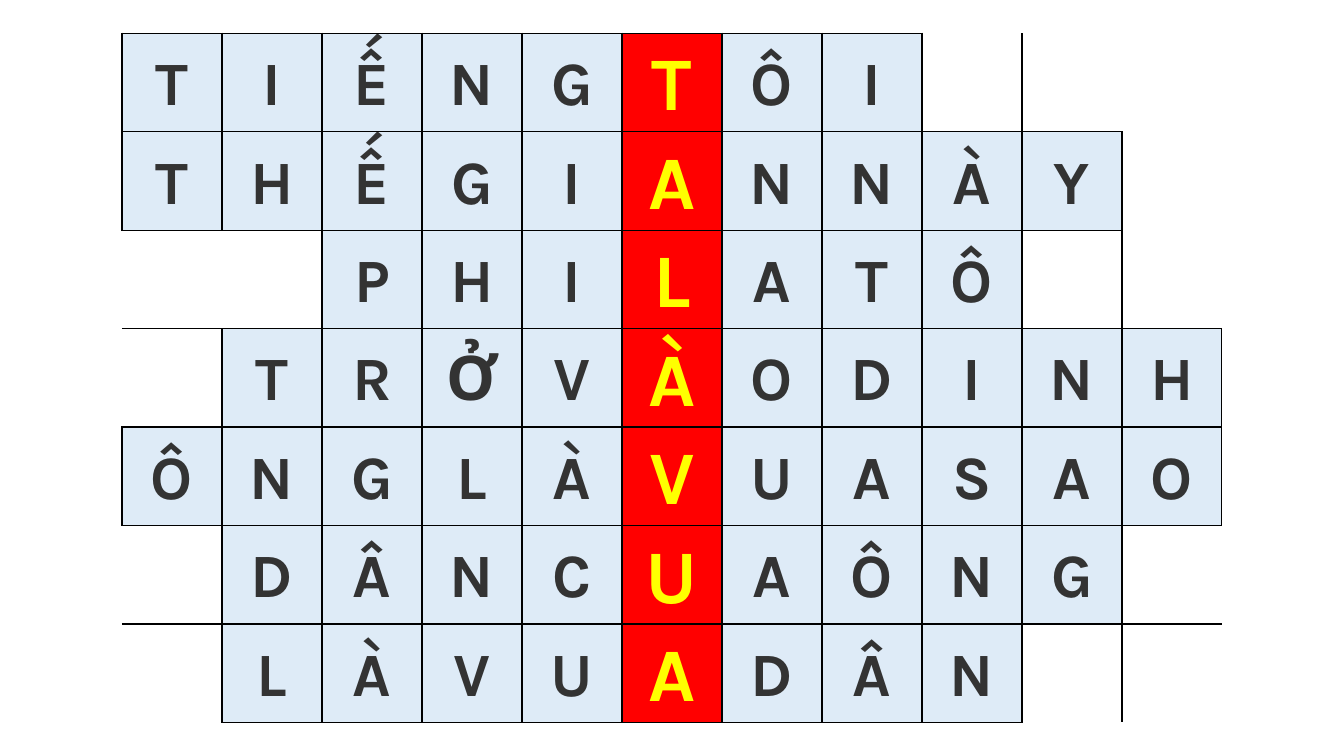
import pptx
import pptx.util
import pptx.dml.color
import pptx.enum.text
import pptx.oxml.ns
import lxml.etree
from pptx.util import Inches

PALE_BLUE = pptx.dml.color.RGBColor(0xDE, 0xEB, 0xF7)
RED = pptx.dml.color.RGBColor(0xFF, 0x00, 0x00)
YELLOW = pptx.dml.color.RGBColor(0xFF, 0xFF, 0x00)
DARK_GREY = pptx.dml.color.RGBColor(0x33, 0x33, 0x33)
BLACK = pptx.dml.color.RGBColor(0x00, 0x00, 0x00)

COLUMN_COUNT = 11
KEY_COLUMN = 5
NO_GRID_STYLE = "{2D5ABB26-0587-4C30-8999-92F81FD0307C}"
ANSWERS = [
    (0, "TIẾNGTÔI"),
    (0, "THẾGIANNÀY"),
    (2, "PHILATÔ"),
    (1, "TRỞVÀODINH"),
    (0, "ÔNGLÀVUASAO"),
    (1, "DÂNCUAÔNG"),
    (1, "LÀVUADÂN"),
]
EDGES = {"lnL": (0, -1), "lnR": (0, 1), "lnT": (-1, 0), "lnB": (1, 0)}

letters = {
    (row, start + offset): letter
    for row, (start, answer) in enumerate(ANSWERS)
    for offset, letter in enumerate(answer)
}


def add_border(cell, edge):
    properties = cell._tc.get_or_add_tcPr()
    line = lxml.etree.SubElement(properties, pptx.oxml.ns.qn("a:" + edge))
    line.set("w", str(pptx.util.Pt(1)))
    fill = lxml.etree.SubElement(line, pptx.oxml.ns.qn("a:solidFill"))
    color = lxml.etree.SubElement(fill, pptx.oxml.ns.qn("a:srgbClr"))
    color.set("val", str(BLACK))


deck = pptx.Presentation()
deck.slide_width = Inches(13.33)
deck.slide_height = Inches(7.5)
page = deck.slides.add_slide(deck.slide_layouts[6])

frame = page.shapes.add_table(
    len(ANSWERS), COLUMN_COUNT, Inches(1.21), Inches(0.33), Inches(10.91), Inches(6.84)
)
crossword = frame.table
crossword.first_row = False
crossword.horz_banding = False
crossword._tbl.tblPr.find(pptx.oxml.ns.qn("a:tableStyleId")).text = NO_GRID_STYLE
for column in crossword.columns:
    column.width = Inches(10.91 / COLUMN_COUNT)
for table_row in crossword.rows:
    table_row.height = Inches(6.84 / len(ANSWERS))

for row in range(len(ANSWERS)):
    for column in range(COLUMN_COUNT):
        cell = crossword.cell(row, column)
        cell.margin_left = cell.margin_right = Inches(0.07)
        cell.margin_top = cell.margin_bottom = 0
        cell.vertical_anchor = pptx.enum.text.MSO_ANCHOR.MIDDLE
        for edge, (down, right) in EDGES.items():
            if (row, column) in letters or (row + down, column + right) in letters:
                add_border(cell, edge)
        if (row, column) not in letters:
            cell.fill.background()
            continue

        is_key = column == KEY_COLUMN
        cell.fill.solid()
        cell.fill.fore_color.rgb = RED if is_key else PALE_BLUE
        para = cell.text_frame.paragraphs[0]
        para.alignment = pptx.enum.text.PP_ALIGN.CENTER
        para.line_spacing = 1.07
        para.space_after = pptx.util.Pt(8)
        span = para.add_run()
        span.text = letters[row, column]
        span.font.name = "Karla"
        span.font.bold = True
        span.font.size = pptx.util.Pt(54 if is_key else 44)
        span.font.color.rgb = YELLOW if is_key else DARK_GREY

deck.save("out.pptx")
